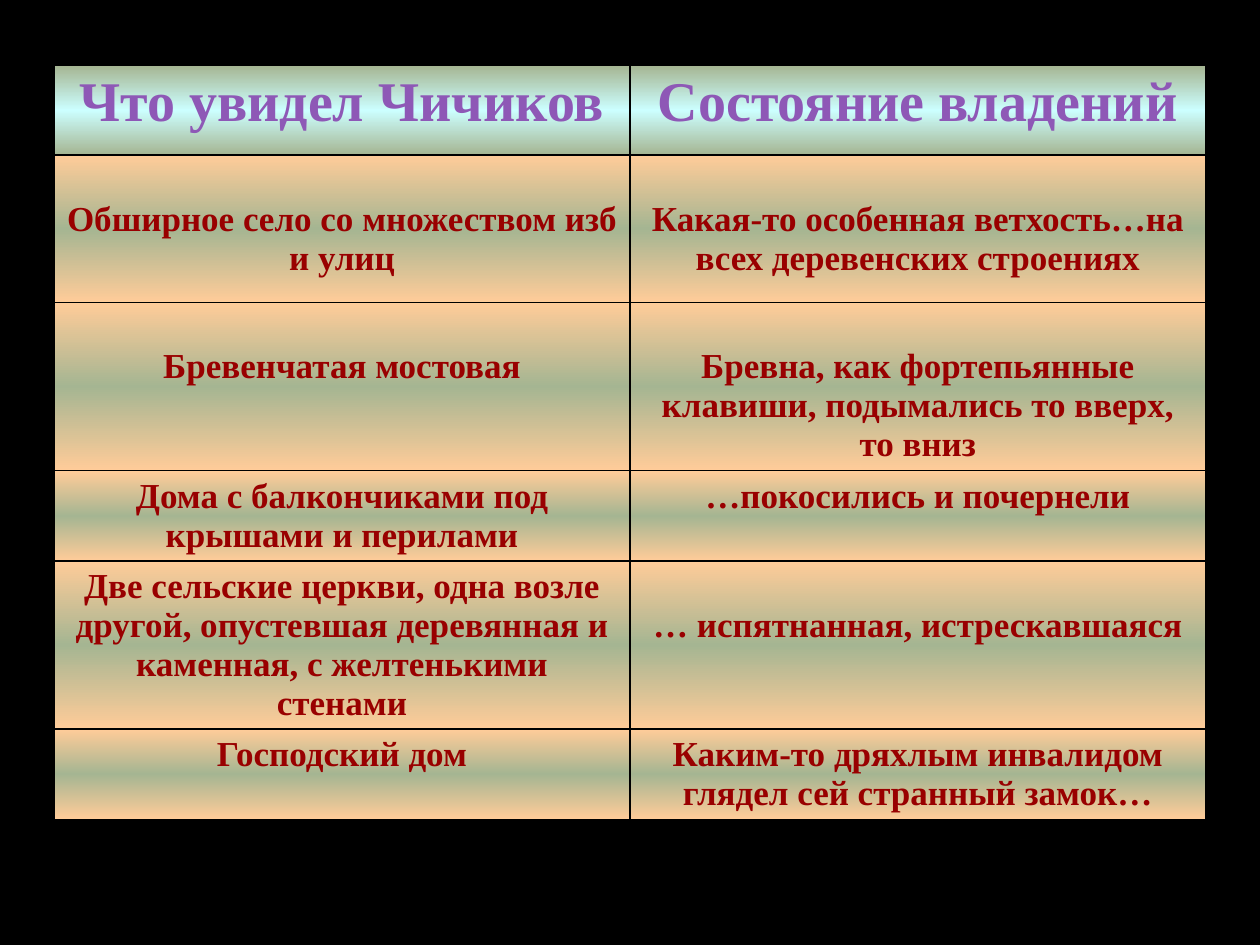
from dataclasses import dataclass

from lxml import etree
from pptx import Presentation
from pptx.dml.color import RGBColor
from pptx.enum.text import MSO_ANCHOR, PP_ALIGN
from pptx.oxml.ns import qn
from pptx.util import Inches, Pt

CENTER = PP_ALIGN.CENTER
TOP = MSO_ANCHOR.TOP
BLANK_LAYOUT = 6
BLACK = "000000"
BORDER_SIDES = ("a:lnL", "a:lnR", "a:lnT", "a:lnB")
PADDING = 0.05
LINE_HEIGHT = 0.31
COLUMN_WIDTH = 4.57


@dataclass(frozen=True)
class CellStyle:
    size: int
    color: str
    edge: str
    middle: str


@dataclass(frozen=True)
class Entry:
    text: str
    lowered: bool = False


@dataclass(frozen=True)
class TableRow:
    height: float
    entries: tuple[Entry, Entry]
    style: CellStyle


HEADER = CellStyle(32, "8E58B6", "A5B592", "CCFFFF")
BODY = CellStyle(20, "990000", "FFCC99", "A5B592")

ROWS = [
    TableRow(0.71, (Entry("Что увидел Чичиков"), Entry("Состояние владений")), HEADER),
    TableRow(1.17, (
        Entry("Обширное село со множеством изб и улиц", True),
        Entry("Какая-то особенная ветхость…на всех деревенских строениях", True),
    ), BODY),
    TableRow(1.26, (
        Entry("Бревенчатая мостовая", True),
        Entry("Бревна, как фортепьянные клавиши, подымались то вверх, то вниз", True),
    ), BODY),
    TableRow(0.7, (
        Entry("Дома с балкончиками под крышами и перилами"),
        Entry("…покосились и почернели"),
    ), BODY),
    TableRow(1.17, (
        Entry("Две сельские церкви, одна возле другой, опустевшая деревянная "
              "и каменная, с желтенькими стенами"),
        Entry("… испятнанная, истрескавшаяся", True),
    ), BODY),
    TableRow(0.7, (
        Entry("Господский дом"),
        Entry("Каким-то дряхлым инвалидом глядел сей странный замок…"),
    ), BODY),
]


def rgb(color: str) -> RGBColor:
    return RGBColor.from_string(color)


def add_color(parent, color: str) -> None:
    etree.SubElement(parent, qn("a:srgbClr"), val=color)


def add_borders(properties) -> None:
    for side in BORDER_SIDES:
        line = etree.SubElement(properties, qn(side), w=str(Pt(1)))
        add_color(etree.SubElement(line, qn("a:solidFill")), BLACK)


def add_gradient(properties, style: CellStyle) -> None:
    """Fill a cell from edge colour to middle colour and back, top to bottom."""
    gradient = etree.SubElement(properties, qn("a:gradFill"), rotWithShape="1")
    stops = etree.SubElement(gradient, qn("a:gsLst"))
    for percent, color in ((0, style.edge), (50, style.middle), (100, style.edge)):
        add_color(etree.SubElement(stops, qn("a:gs"), pos=str(percent * 1000)), color)
    etree.SubElement(gradient, qn("a:lin"), ang=str(90 * 60000), scaled="0")


def fill_cell(cell, entry: Entry, style: CellStyle) -> None:
    cell.text = entry.text
    cell.vertical_anchor = TOP
    cell.margin_top = Inches(PADDING + LINE_HEIGHT * entry.lowered)
    cell.margin_bottom = Inches(PADDING)
    paragraph = cell.text_frame.paragraphs[0]
    paragraph.alignment = CENTER
    font = paragraph.runs[0].font
    font_format = {"name": "Times New Roman", "size": Pt(style.size), "bold": True}
    for name, value in font_format.items():
        setattr(font, name, value)
    font.color.rgb = rgb(style.color)
    properties = cell._tc.get_or_add_tcPr()
    add_borders(properties)
    add_gradient(properties, style)


def add_estate_table(slide) -> None:
    frame = slide.shapes.add_table(
        len(ROWS), 2, Inches(0.43), Inches(0.52), Inches(2 * COLUMN_WIDTH), Inches(6.02)
    )
    table = frame.table
    table.first_row = False
    table.horz_banding = False
    for column in table.columns:
        column.width = Inches(COLUMN_WIDTH)
    for table_row, row in zip(table.rows, ROWS):
        table_row.height = Inches(row.height)
        for cell, entry in zip(table_row.cells, row.entries):
            fill_cell(cell, entry, row.style)
    frame.height = Inches(6.02)


def main() -> None:
    presentation = Presentation()
    presentation.slide_width = Inches(10)
    presentation.slide_height = Inches(7.5)
    slide = presentation.slides.add_slide(presentation.slide_layouts[BLANK_LAYOUT])
    background = slide.background.fill
    background.solid()
    background.fore_color.rgb = rgb(BLACK)
    add_estate_table(slide)
    presentation.save("out.pptx")


if __name__ == "__main__":
    main()
